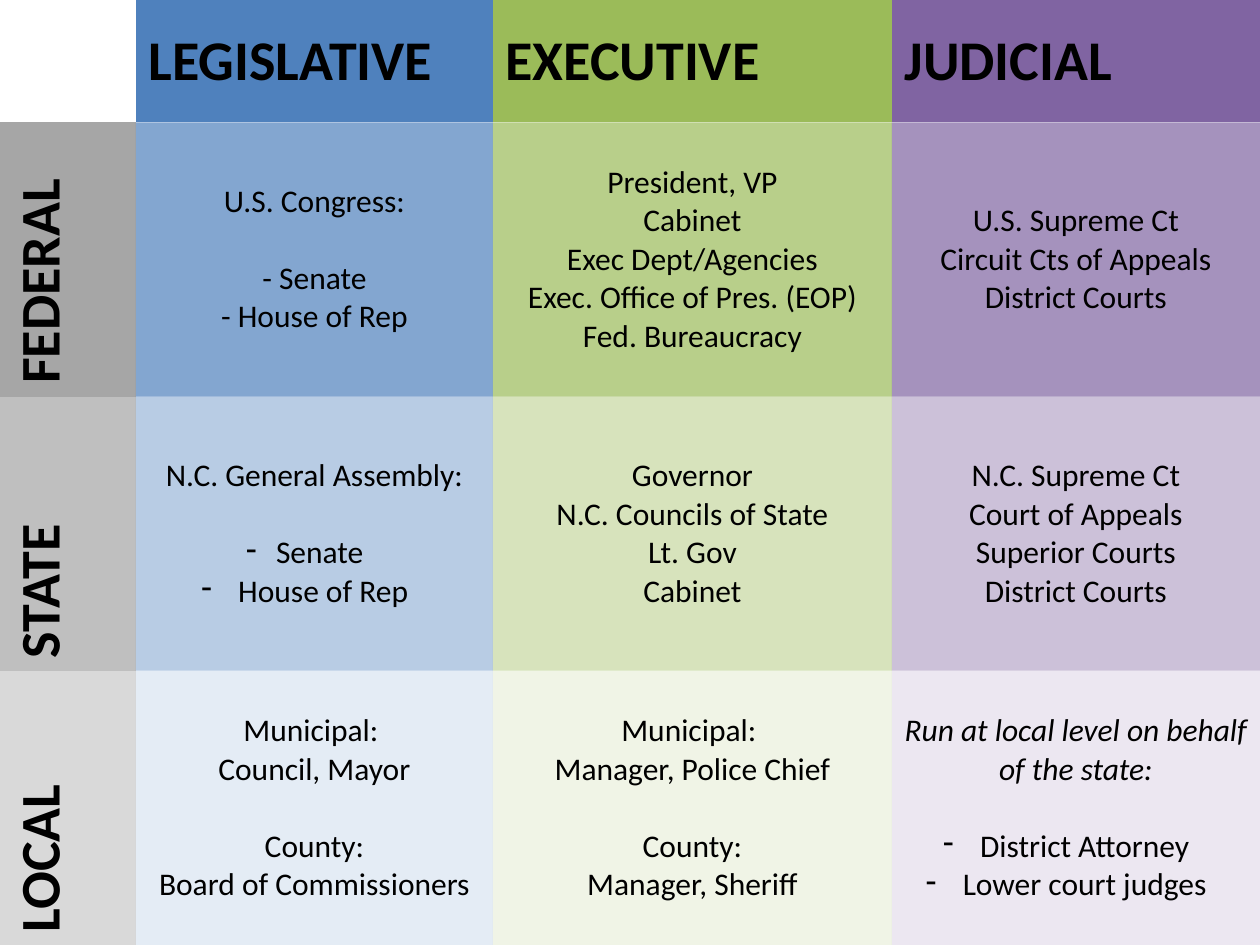
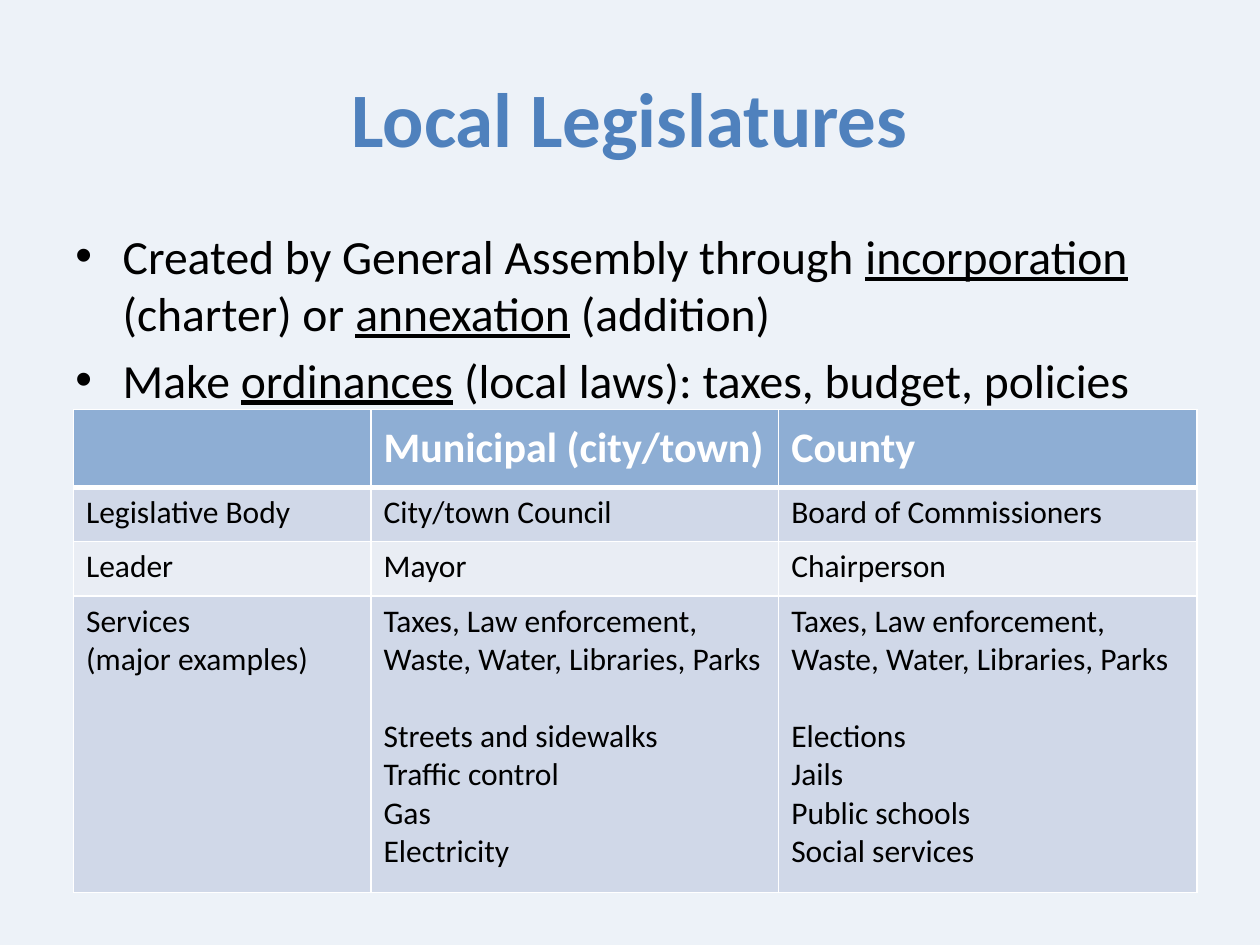
import collections
import pptx
import pptx.util
import pptx.dml.color
import pptx.enum.text
import pptx.oxml
import pptx.oxml.ns

Pt = pptx.util.Pt
RGBColor = pptx.dml.color.RGBColor
qn = pptx.oxml.ns.qn
MIDDLE = pptx.enum.text.MSO_ANCHOR.MIDDLE
TOP = pptx.enum.text.MSO_ANCHOR.TOP
CENTER = pptx.enum.text.PP_ALIGN.CENTER
LEFT = pptx.enum.text.PP_ALIGN.LEFT

BLUE = RGBColor(0x4F, 0x81, 0xBD)
GREEN = RGBColor(0x9B, 0xBB, 0x59)
PURPLE = RGBColor(0x80, 0x64, 0xA2)
BLACK = RGBColor(0, 0, 0)
WHITE = RGBColor(255, 255, 255)
PALE_BLUE = RGBColor(0xED, 0xF2, 0xF8)
BAND_DARK = RGBColor(0xD0, 0xD8, 0xE8)
BAND_LIGHT = RGBColor(0xE9, 0xED, 0xF4)
GREYS = [RGBColor(v, v, v) for v in (0xA6, 0xBF, 0xD9)]

FONT = "Calibri"
PLAIN_TABLE = "{2D5ABB26-0587-4C30-8999-92F81FD0307C}"
BLOCK_GAP = 22

Line = collections.namedtuple("Line", "text bullet italic", defaults=(False, False))


def dash(text):
    return Line(text, bullet=True)


BRANCHES = [("LEGISLATIVE", BLUE), ("EXECUTIVE", GREEN), ("JUDICIAL", PURPLE)]
LEVELS = [
    ("FEDERAL", 70, [
        [["U.S. Congress:"], ["- Senate", "- House of Rep"]],
        [["President, VP", "Cabinet", "Exec Dept/Agencies",
          "Exec. Office of Pres. (EOP)", "Fed. Bureaucracy"]],
        [["U.S. Supreme Ct", "Circuit Cts of Appeals", "District Courts"]],
    ]),
    ("STATE", 40, [
        [["N.C. General Assembly:"], [dash("Senate"), dash(" House of Rep")]],
        [["Governor", "N.C. Councils of State", "Lt. Gov", "Cabinet"]],
        [["N.C. Supreme Ct", "Court of Appeals", "Superior Courts", "District Courts"]],
    ]),
    ("LOCAL", 15, [
        [["Municipal: \vCouncil, Mayor"], ["County:", "Board of Commissioners"]],
        [["Municipal: \vManager, Police Chief"], ["County:", "Manager, Sheriff"]],
        [[Line("Run at local level on behalf of the state:", italic=True)],
         [dash(" District Attorney"), dash(" Lower court judges")]],
    ]),
]

SHARED_SERVICES = ["Taxes, Law enforcement, Waste, Water, Libraries, Parks"]
LOCAL_HEADS = ["", "Municipal (city/town)", "County"]
LOCAL_ROWS = [
    [[["Legislative Body"]], [["City/town Council"]], [["Board of Commissioners"]]],
    [[["Leader"]], [["Mayor"]], [["Chairperson"]]],
    [[["Services\v(major examples)"]],
     [SHARED_SERVICES, ["Streets and sidewalks", "Traffic control", "Gas", "Electricity"]],
     [SHARED_SERVICES, ["Elections", "Jails", "Public schools", "Social services"]]],
]
POINTS = [
    ["Created by General Assembly through ", "incorporation", " (charter) or ",
     "annexation", " (addition)"],
    ["Make ", "ordinances", " (local laws): taxes, budget, policies"],
]


def style_run(r, size, color=BLACK, bold=False):
    r.font.name = FONT
    r.font.size = Pt(size)
    r.font.color.rgb = color
    r.font.bold = bold


def add_bullet(p, char, font=None):
    pPr = p._p.get_or_add_pPr()
    if font:
        pptx.oxml.ns.qn("a:buFont")
        pPr.append(pPr.makeelement(qn("a:buFont"), {"typeface": font}))
    else:
        pPr.append(pPr.makeelement(qn("a:buFontTx"), {}))
    pPr.append(pPr.makeelement(qn("a:buChar"), {"char": char}))


def fill_cell(cell, color, opacity=100):
    cell.fill.solid()
    cell.fill.fore_color.rgb = color
    if opacity < 100:
        clr = cell._tc.tcPr.find(".//" + qn("a:srgbClr"))
        clr.append(clr.makeelement(qn("a:alpha"), {"val": str(opacity * 1000)}))


def border_cell(cell, top=1, bottom=1):
    tcPr = cell._tc.get_or_add_tcPr()
    for i, (side, width) in enumerate(zip("LRTB", (1, 1, top, bottom))):
        ln = tcPr.makeelement(qn("a:ln" + side), {"w": str(Pt(width))})
        solid = ln.makeelement(qn("a:solidFill"), {})
        solid.append(solid.makeelement(qn("a:srgbClr"), {"val": str(WHITE)}))
        ln.append(solid)
        tcPr.insert(i, ln)


def write_cell(cell, blocks, size, color=BLACK, bold=False, align=LEFT, anchor=MIDDLE):
    cell.vertical_anchor = anchor
    tf = cell.text_frame
    p = tf.paragraphs[0]
    for b, block in enumerate(blocks):
        for i, item in enumerate(block):
            line = item if isinstance(item, Line) else Line(item)
            if b or i:
                p = tf.add_paragraph()
            p.text = line.text
            p.alignment = align
            if b and i == 0:
                p.space_before = Pt(BLOCK_GAP)
            if line.bullet:
                add_bullet(p, "-")
            for r in p.runs:
                style_run(r, size, color, bold)
                r.font.italic = line.italic


def add_plain_table(s, x, y, widths, heights):
    frame = s.shapes.add_table(len(heights), len(widths), Pt(x), Pt(y),
                               Pt(sum(widths)), Pt(sum(heights)))
    table = frame.table
    table.first_row = False
    table.horz_banding = False
    frame._element.find(".//" + qn("a:tableStyleId")).text = PLAIN_TABLE
    for col, w in zip(table.columns, widths):
        col.width = Pt(w)
    for row, h in zip(table.rows, heights):
        row.height = Pt(h)
    return table


def branch_table(s, x, y):
    table = add_plain_table(s, x, y, [77.7, 204, 228, 210.3], [69.9] + [156.7] * 3)
    table.cell(0, 0).fill.background()
    for c, (branch, color) in enumerate(BRANCHES, 1):
        cell = table.cell(0, c)
        write_cell(cell, [[branch]], 32, bold=True)
        fill_cell(cell, color)
    for n, (level, opacity, bodies) in enumerate(LEVELS, 1):
        head = table.cell(n, 0)
        write_cell(head, [[level]], 32, bold=True)
        fill_cell(head, GREYS[n - 1])
        head._tc.tcPr.set("vert", "vert270")
        for c, blocks in enumerate(bodies, 1):
            cell = table.cell(n, c)
            write_cell(cell, blocks, 18, align=CENTER)
            fill_cell(cell, BRANCHES[c - 1][1], opacity)


def local_table(s, x, y):
    table = add_plain_table(s, x, y, [170, 233, 239], [44.5, 31, 31, 169.5])
    for c, head in enumerate(LOCAL_HEADS):
        cell = table.cell(0, c)
        if head:
            write_cell(cell, [[head]], 24, WHITE, bold=True)
        fill_cell(cell, BLUE, 60)
        border_cell(cell, bottom=3)
    for n, row in enumerate(LOCAL_ROWS, 1):
        for c, blocks in enumerate(row):
            cell = table.cell(n, c)
            write_cell(cell, blocks, 18, anchor=TOP)
            fill_cell(cell, BAND_DARK if n % 2 else BAND_LIGHT)
            border_cell(cell, top=3 if n == 1 else 1)


def add_text(s, x, y, w, h, anchor):
    tf = s.shapes.add_textbox(Pt(x), Pt(y), Pt(w), Pt(h)).text_frame
    tf.word_wrap = True
    tf.vertical_anchor = anchor
    return tf


def title(s, text, x, y, w, h):
    p = add_text(s, x, y, w, h, MIDDLE).paragraphs[0]
    p.text = text
    p.alignment = CENTER
    style_run(p.runs[0], 44, BLUE, bold=True)


def bullet_list(s, points, x, y, w, h):
    tf = add_text(s, x, y, w, h, TOP)
    for n, parts in enumerate(points):
        p = tf.add_paragraph() if n else tf.paragraphs[0]
        p.space_before = Pt(5.4)
        pPr = p._p.get_or_add_pPr()
        pPr.set("marL", str(Pt(27)))
        pPr.set("indent", str(-Pt(27)))
        add_bullet(p, "•", "Arial")
        for i, part in enumerate(parts):
            r = p.add_run()
            r.text = part
            style_run(r, 27.2)
            r.font.underline = i % 2 == 1


def add_slide(prs, background):
    s = prs.slides.add_slide(prs.slide_layouts[6])
    s.background.fill.solid()
    s.background.fill.fore_color.rgb = background
    return s


def main():
    prs = pptx.Presentation()
    prs.slide_width = Pt(720)
    prs.slide_height = Pt(540)

    s = add_slide(prs, WHITE)
    branch_table(s, 0, 0)

    s = add_slide(prs, PALE_BLUE)
    title(s, "Local Legislatures", 36, 21.6, 648, 90)
    bullet_list(s, POINTS, 36, 126, 648, 114)
    local_table(s, 42, 234)

    prs.save("out.pptx")


if __name__ == "__main__":
    main()
